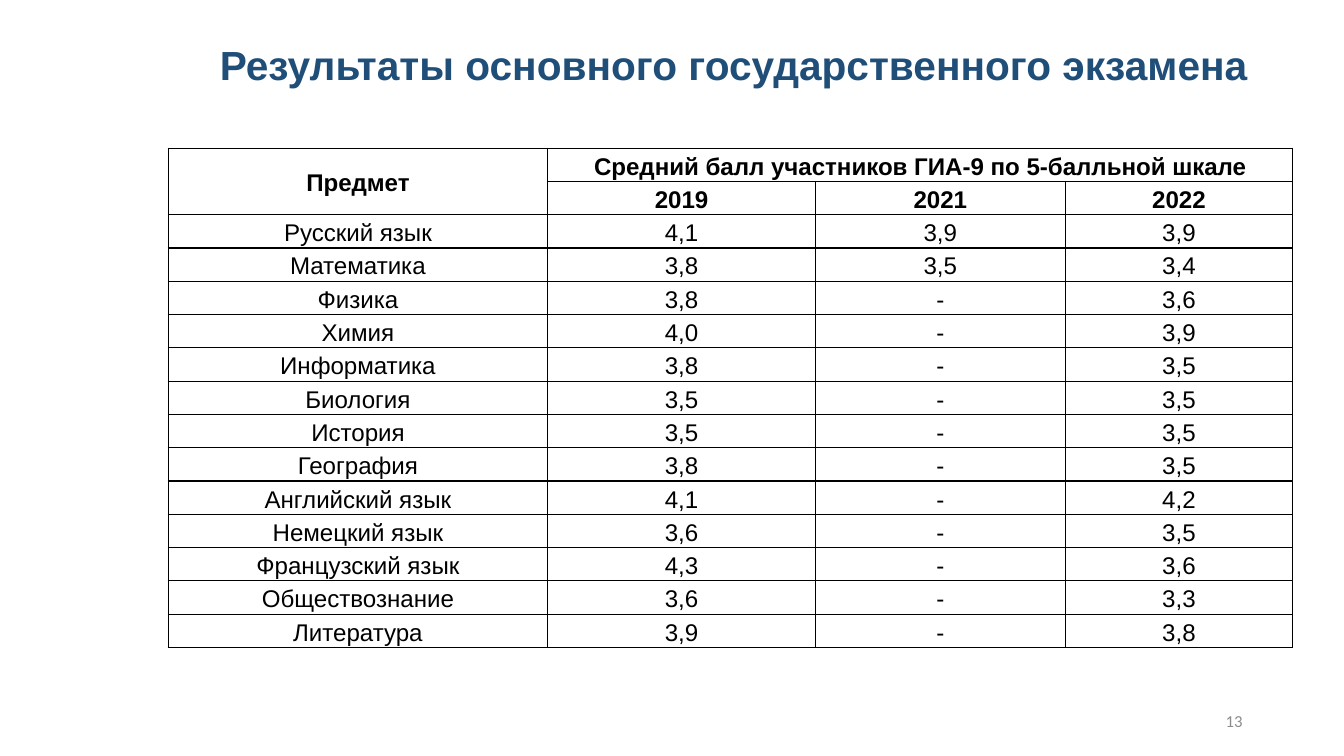
from lxml import etree
from pptx import Presentation
from pptx.dml.color import RGBColor
from pptx.enum.text import MSO_ANCHOR, MSO_AUTO_SIZE, PP_ALIGN
from pptx.oxml.ns import qn
from pptx.util import Inches, Pt

CENTER, RIGHT = PP_ALIGN.CENTER, PP_ALIGN.RIGHT
TOP, MIDDLE = MSO_ANCHOR.TOP, MSO_ANCHOR.MIDDLE
FIT_SHAPE = MSO_AUTO_SIZE.SHAPE_TO_FIT_TEXT

BLACK, WHITE, NAVY, GRAY = "000000", "FFFFFF", "1F4E79", "8C8C8C"

COLUMN_WIDTHS = [4.15, 2.93, 2.73, 2.49]
TABLE_HEIGHT = 5.46
HEADER_ROWS = [
    ["Предмет", "Средний балл участников ГИА-9 по 5-балльной шкале", "", ""],
    ["", "2019", "2021", "2022"],
]
SCORES = [
    ["Русский язык", "4,1", "3,9", "3,9"],
    ["Математика", "3,8", "3,5", "3,4"],
    ["Физика", "3,8", "-", "3,6"],
    ["Химия", "4,0", "-", "3,9"],
    ["Информатика", "3,8", "-", "3,5"],
    ["Биология", "3,5", "-", "3,5"],
    ["История", "3,5", "-", "3,5"],
    ["География", "3,8", "-", "3,5"],
    ["Английский язык", "4,1", "-", "4,2"],
    ["Немецкий язык", "3,6", "-", "3,5"],
    ["Французский язык", "4,3", "-", "3,6"],
    ["Обществознание", "3,6", "-", "3,3"],
    ["Литература", "3,9", "-", "3,8"],
]


def color(hex_value):
    return RGBColor.from_string(hex_value)


def write(frame, text, size, hex_value, font="Arial", bold=False, align=CENTER):
    frame.text = text
    para = frame.paragraphs[0]
    para.alignment = align
    para.font.size = Pt(size)
    for span in para.runs:
        span.font.name = font
        span.font.size = Pt(size)
        span.font.bold = bold
        span.font.color.rgb = color(hex_value)
    return para


def add_text(page, left, top, width, height, text, size, hex_value,
             wrap=True, anchor=TOP, **style):
    box = page.shapes.add_textbox(Inches(left), Inches(top), Inches(width), Inches(height))
    frame = box.text_frame
    write(frame, text, size, hex_value, **style)
    frame.word_wrap = wrap
    frame.vertical_anchor = anchor
    return frame


def add_borders(cell, hex_value, width):
    properties = cell._tc.get_or_add_tcPr()
    for position, side in enumerate(("a:lnL", "a:lnR", "a:lnT", "a:lnB")):
        line = etree.Element(qn(side), w=str(Pt(width)))
        fill = etree.SubElement(line, qn("a:solidFill"))
        etree.SubElement(fill, qn("a:srgbClr"), val=hex_value)
        properties.insert(position, line)


def format_cell(cell, text, bold):
    para = write(cell.text_frame, text, 19, BLACK, bold=bold)
    para.line_spacing = 1.15
    cell.vertical_anchor = MIDDLE
    cell.margin_left = cell.margin_right = Inches(0.07)
    cell.margin_top = cell.margin_bottom = 0
    cell.fill.solid()
    cell.fill.fore_color.rgb = color(WHITE)
    add_borders(cell, BLACK, 1)


def add_score_table(page, left, top):
    rows = HEADER_ROWS + SCORES
    table = page.shapes.add_table(
        len(rows), len(COLUMN_WIDTHS), Inches(left), Inches(top),
        Inches(sum(COLUMN_WIDTHS)), Inches(TABLE_HEIGHT)).table
    for column, width in zip(table.columns, COLUMN_WIDTHS):
        column.width = Inches(width)
    for r, values in enumerate(rows):
        for c, text in enumerate(values):
            format_cell(table.cell(r, c), text, bold=r < len(HEADER_ROWS))

    # Header: subject spans two rows, score heading spans the years
    table.cell(0, 0).merge(table.cell(1, 0))
    table.cell(0, 1).merge(table.cell(0, 3))


def main():
    deck = Presentation()
    deck.slide_width, deck.slide_height = Inches(14.7), Inches(8.27)
    page = deck.slides.add_slide(deck.slide_layouts[6])

    # Slide number
    add_text(page, 10.38, 7.66, 3.31, 0.44, "13", 13.2, GRAY,
             anchor=MIDDLE, font="Calibri", align=RIGHT)

    # Title
    title = add_text(page, 2.26, 0.39, 11.54, 0.64,
                     "Результаты основного государственного экзамена",
                     32, NAVY, wrap=False, bold=True)
    title.auto_size = FIT_SHAPE

    # Average scores by subject and year
    add_score_table(page, 1.84, 1.62)

    deck.save("out.pptx")


if __name__ == "__main__":
    main()
